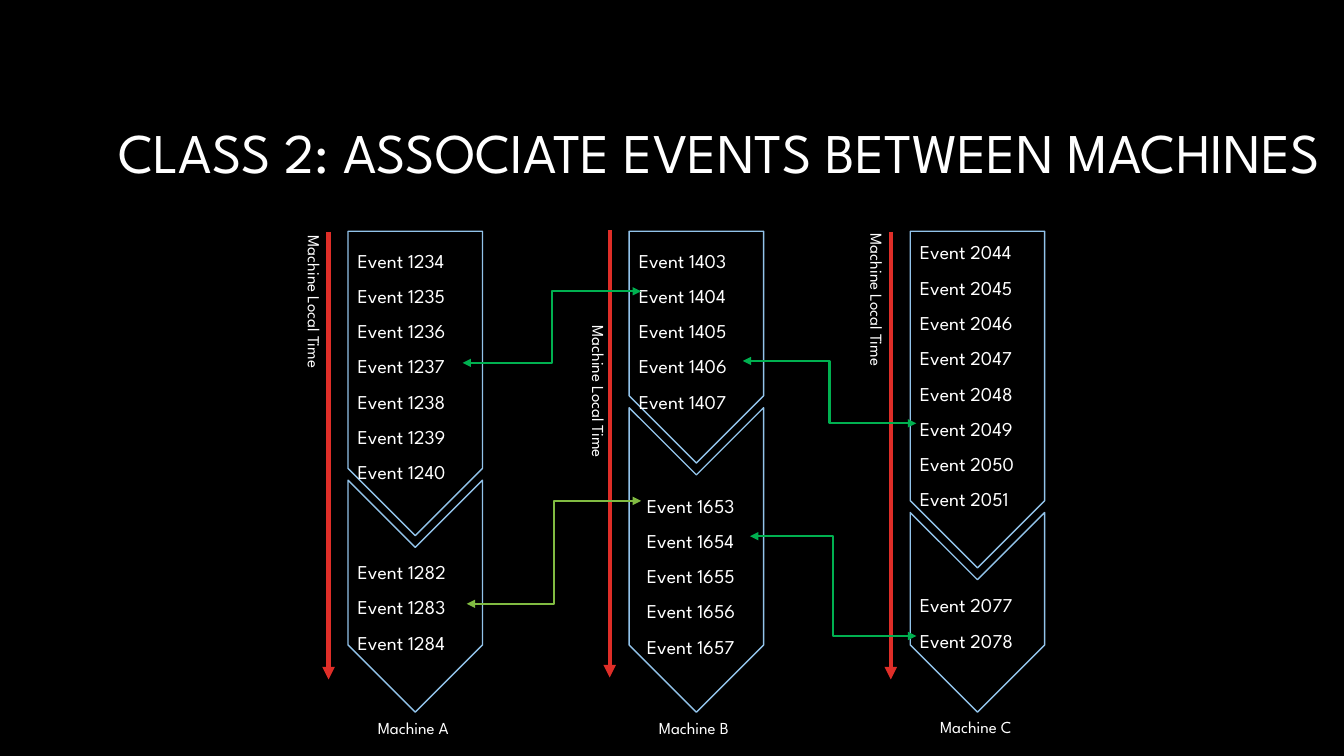
import pptx
import pptx.util
import pptx.dml.color
import pptx.enum.shapes
import pptx.enum.text
import pptx.oxml.ns
from lxml import etree

Pt = pptx.util.Pt
RGBColor = pptx.dml.color.RGBColor
MSO_SHAPE = pptx.enum.shapes.MSO_SHAPE
MSO_CONNECTOR = pptx.enum.shapes.MSO_CONNECTOR
PP_ALIGN = pptx.enum.text.PP_ALIGN
MSO_ANCHOR = pptx.enum.text.MSO_ANCHOR
MSO_AUTO_SIZE = pptx.enum.text.MSO_AUTO_SIZE
qn = pptx.oxml.ns.qn

BLACK = RGBColor(0x00, 0x00, 0x00)
WHITE = RGBColor(0xFF, 0xFF, 0xFF)
BLUE = RGBColor(0x92, 0xC3, 0xEA)
RED = RGBColor(0xDF, 0x2E, 0x28)
GREEN = RGBColor(0x00, 0xB0, 0x50)
LIME = RGBColor(0x81, 0xBB, 0x42)

FIRST_LEFT, PITCH, WIDTH = 248.4, 200.8, 96
CENTER, ARROW, NAME = 48.2, -13.7, 14.4
TOP, BOTTOM, OVERLAP = 165.2, 508.7, 39.6
LINE_HEIGHT, ARROW_LENGTH = 25.4, 319.7

MACHINES = [
    dict(name="Machine A", name_top=509, length=217.4, arrow_top=165.6,
         time_center=(224.6, 217.4),
         events=[(0, 165.6, range(1234, 1241)), (0, 388.1, range(1282, 1285))]),
    dict(name="Machine B", name_top=509, length=165.6, arrow_top=164.2,
         time_center=(427.7, 281.5),
         events=[(0, 165.6, range(1403, 1408)), (5.8, 340.6, range(1653, 1658))]),
    dict(name="Machine C", name_top=508.3, length=240.5, arrow_top=165.6,
         time_center=(626.4, 216),
         events=[(0, 159.8, range(2044, 2052)), (0, 411.8, range(2077, 2079))]),
]

ASSOCIATIONS = [
    ((330.5, 259.2), (457.9, 208.1), GREEN),
    ((530.6, 257.8), (654.5, 302.4), GREEN),
    ((333.4, 431.3), (457.9, 357.8), LIME),
    ((535.7, 383), (654.5, 454.3), GREEN),
]


def write_text(tf, text, size=12, color=WHITE, font="League Spartan",
               align=PP_ALIGN.LEFT, spacing=1.0):
    for i, line in enumerate(text.split("\n")):
        p = tf.paragraphs[0] if i == 0 else tf.add_paragraph()
        p.alignment = align
        p.line_spacing = spacing
        r = p.add_run()
        r.text = line
        r.font.size = Pt(size)
        r.font.name = font
        r.font.color.rgb = color


class Diagram:
    def __init__(self, s):
        self.s = s
        s.background.fill.solid()
        s.background.fill.fore_color.rgb = BLACK

    def text(self, text, x, y, w, h, wrap=True, rotation=0,
             anchor=MSO_ANCHOR.TOP, auto_size=MSO_AUTO_SIZE.SHAPE_TO_FIT_TEXT, **fmt):
        sp = self.s.shapes.add_textbox(Pt(x), Pt(y), Pt(w), Pt(h))
        sp.rotation = rotation
        tf = sp.text_frame
        tf.word_wrap = wrap
        tf.auto_size = auto_size
        tf.vertical_anchor = anchor
        write_text(tf, text, **fmt)

    def down_shape(self, kind, center, top, length):
        sp = self.s.shapes.add_shape(
            kind, Pt(center - length / 2), Pt(top + (length - WIDTH) / 2),
            Pt(length), Pt(WIDTH))
        sp.rotation = 90
        sp.shadow.inherit = False
        sp.fill.background()
        sp.line.color.rgb = BLUE
        sp.line.width = Pt(1)

    def arrow(self, kind, start, end, color, width, ends):
        sp = self.s.shapes.add_connector(kind, *(Pt(v) for v in start + end))
        sp.line.color.rgb = color
        sp.line.width = Pt(width)
        ln = sp.line._get_or_add_ln()
        for tag in ends:
            etree.SubElement(ln, qn(tag), type="triangle")
        etree.SubElement(sp._element.spPr, qn("a:effectLst"))


def main():
    prs = pptx.Presentation()
    prs.slide_width, prs.slide_height = Pt(960), Pt(540)
    d = Diagram(prs.slides.add_slide(prs.slide_layouts[6]))

    d.text("CLASS 2: ASSOCIATE EVENTS BETWEEN MACHINES ", -8.6, 60.5, 968.4, 101.5,
           anchor=MSO_ANCHOR.MIDDLE, auto_size=MSO_AUTO_SIZE.NONE,
           size=40, align=PP_ALIGN.RIGHT, spacing=0.9)

    for i, m in enumerate(MACHINES):
        left = FIRST_LEFT + i * PITCH
        notch = TOP + m["length"] - OVERLAP
        d.down_shape(MSO_SHAPE.PENTAGON, left + CENTER, TOP, m["length"])
        d.down_shape(MSO_SHAPE.CHEVRON, left + CENTER, notch, BOTTOM - notch)
        for indent, top, numbers in m["events"]:
            d.text("\n".join(f"Event {n}" for n in numbers), left + indent, top,
                   WIDTH, LINE_HEIGHT * len(numbers) + 4.4, size=14, spacing=1.5)
        x, y = left + ARROW, m["arrow_top"]
        d.arrow(MSO_CONNECTOR.STRAIGHT, (x, y), (x, y + ARROW_LENGTH), RED, 3,
                ["a:tailEnd"])
        d.text(m["name"], left + NAME, m["name_top"], 67, 21.6, wrap=False)
        cx, cy = m["time_center"]
        d.text("Machine Local Time", cx - 56.15, cy - 10.8, 112.3, 21.6,
               wrap=False, rotation=90)

    for start, end, color in ASSOCIATIONS:
        d.arrow(MSO_CONNECTOR.ELBOW, start, end, color, 1.5,
                ["a:headEnd", "a:tailEnd"])

    prs.save("out.pptx")


if __name__ == "__main__":
    main()
